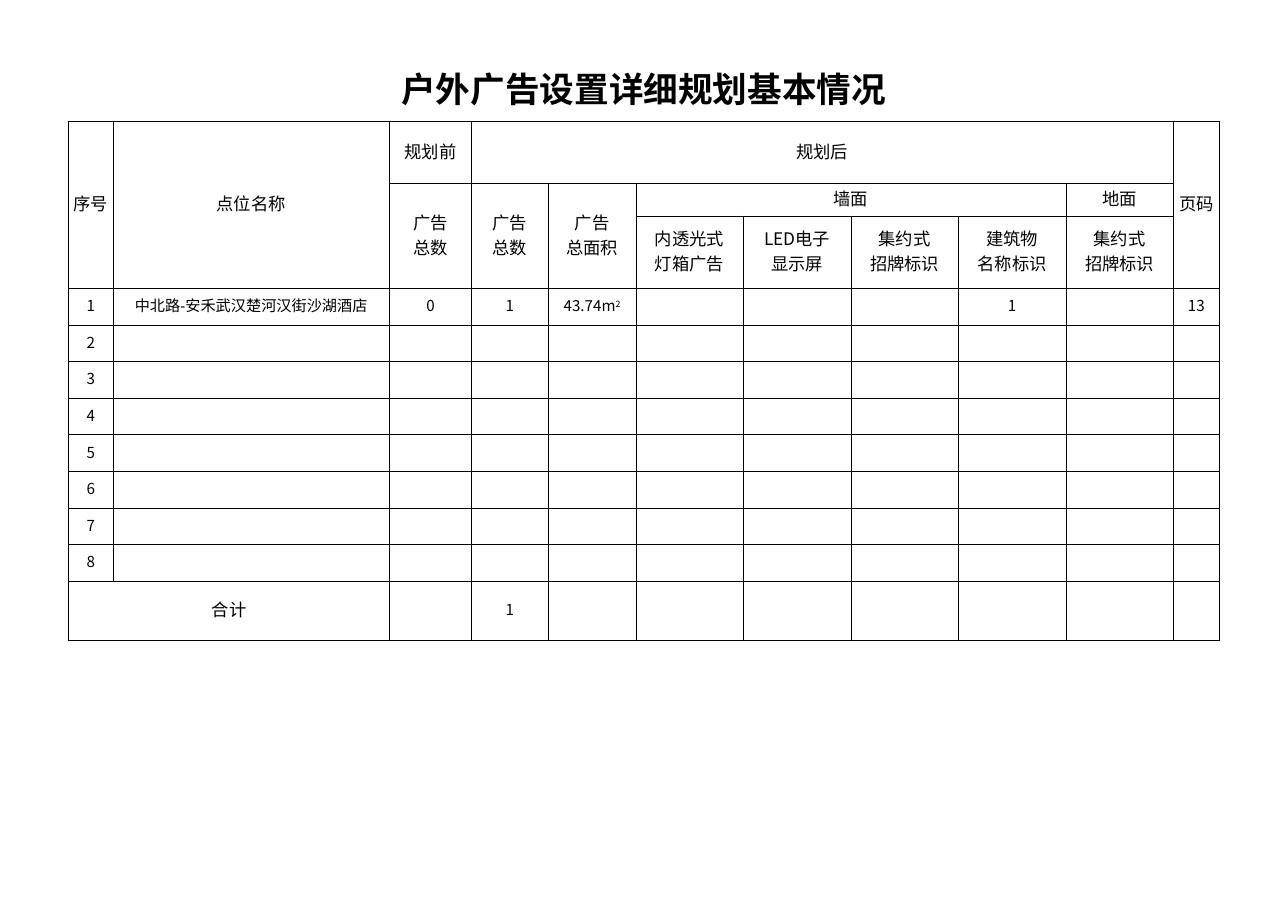
from lxml.etree import SubElement
from pptx import Presentation
from pptx.dml.color import RGBColor
from pptx.enum.text import MSO_ANCHOR, PP_ALIGN
from pptx.oxml.ns import qn
from pptx.util import Inches, Pt

BLACK = RGBColor(0, 0, 0)
WHITE = RGBColor(255, 255, 255)
SANS = "Noto Sans CJK SC"
LEFT, TOP = 0.88, 0.73
COLUMN_WIDTHS = [0.57, 3.55, 1.05, 0.99, 1.12] + [1.38] * 5 + [0.59]
SITE_ROWS = 8
FIRST_SITE_ROW = 4
TOTAL_ROW = FIRST_SITE_ROW + SITE_ROWS
ROW_HEIGHTS = [0.83, 0.79, 0.42, 0.93] + [0.47] * SITE_ROWS + [0.76]
CELL_FORMAT = {"margin_left": Inches(0.01), "margin_top": Inches(0.01),
               "margin_right": Inches(0.01), "margin_bottom": Inches(0.05),
               "vertical_anchor": MSO_ANCHOR.MIDDLE}
TITLE = "户外广告设置详细规划基本情况"

# row, column, rows spanned, columns spanned, text
HEADINGS = [
    (1, 0, 3, 1, "序号"),
    (1, 1, 3, 1, "点位名称"),
    (1, 2, 1, 1, "规划前"),
    (1, 3, 1, 7, "规划后"),
    (1, 10, 3, 1, "页码"),
    (2, 2, 2, 1, "广告\n总数"),
    (2, 3, 2, 1, "广告\n总数"),
    (2, 4, 2, 1, "广告\n总面积"),
    (2, 5, 1, 4, "墙面"),
    (2, 9, 1, 1, "地面"),
    (3, 5, 1, 1, "内透光式\n灯箱广告"),
    (3, 6, 1, 1, "LED电子\n显示屏"),
    (3, 7, 1, 1, "集约式\n招牌标识"),
    (3, 8, 1, 1, "建筑物\n名称标识"),
    (3, 9, 1, 1, "集约式\n招牌标识"),
    (TOTAL_ROW, 0, 1, 2, "合计"),
]
SITE_NAME = "中北路-安禾武汉楚河汉街沙湖酒店"
FIRST_SITE = {2: "0", 3: "1", 4: "43.74m^2", 8: "1", 10: "13"}


def set_values(target, values):
    for name, value in values.items():
        setattr(target, name, value)


def add_span(para, text, size, bold=False, font_name=SANS, raised=False):
    span = para.add_run()
    span.text = text
    set_values(span.font, {"name": font_name, "size": Pt(size), "bold": bold})
    span.font.color.rgb = BLACK
    properties = span._r.get_or_add_rPr()
    SubElement(properties, qn("a:ea"), typeface=SANS)
    if raised:
        properties.set("baseline", "30000")


def write(cell, text, size, **style):
    """Write centred lines; whatever follows a caret is superscript."""
    frame = cell.text_frame
    for index, line in enumerate(text.split("\n")):
        para = frame.add_paragraph() if index else frame.paragraphs[0]
        para.alignment = PP_ALIGN.CENTER
        base, _, power = line.partition("^")
        add_span(para, base, size, **style)
        if power:
            add_span(para, power, size, raised=True, **style)


def format_cell(cell, sides):
    """Draw the borders on the given sides and hide the others."""
    set_values(cell, CELL_FORMAT)
    properties = cell._tc.get_or_add_tcPr()
    for side in "LRTB":
        border = SubElement(properties, qn(f"a:ln{side}"), w=str(Pt(0.5)))
        if side in sides:
            fill = SubElement(border, qn("a:solidFill"))
            SubElement(fill, qn("a:srgbClr"), val=str(BLACK))
        else:
            SubElement(border, qn("a:noFill"))
    cell.fill.solid()
    cell.fill.fore_color.rgb = WHITE


def add_grid(page):
    frame = page.shapes.add_table(
        len(ROW_HEIGHTS), len(COLUMN_WIDTHS), Inches(LEFT), Inches(TOP),
        Inches(sum(COLUMN_WIDTHS)), Inches(sum(ROW_HEIGHTS)))
    table = frame.table
    set_values(table, {"first_row": False, "horz_banding": False})
    for column, width in zip(table.columns, COLUMN_WIDTHS):
        column.width = Inches(width)
    for index, (row, height) in enumerate(zip(table.rows, ROW_HEIGHTS)):
        row.height = Inches(height)
        for cell in row.cells:
            format_cell(cell, "LRTB" if index else "B")
    return table


def fill_title(table):
    cell = table.cell(0, 0)
    cell.merge(table.cell(0, len(COLUMN_WIDTHS) - 1))
    write(cell, TITLE, 32, bold=True)


def fill_headings(table):
    for row, column, row_span, column_span, text in HEADINGS:
        cell = table.cell(row, column)
        if row_span * column_span > 1:
            cell.merge(table.cell(row + row_span - 1, column + column_span - 1))
        write(cell, text, 16)


def fill_sites(table):
    for number in range(SITE_ROWS):
        write(table.cell(FIRST_SITE_ROW + number, 0), str(number + 1), 14)
    write(table.cell(FIRST_SITE_ROW, 1), SITE_NAME, 14, font_name="Arial")
    for column, text in FIRST_SITE.items():
        write(table.cell(FIRST_SITE_ROW, column), text, 14)
    write(table.cell(TOTAL_ROW, 3), "1", 14)


def main():
    deck = Presentation()
    set_values(deck, {"slide_width": Inches(16.53),
                      "slide_height": Inches(11.69)})
    page = deck.slides.add_slide(deck.slide_layouts.get_by_name("Blank"))
    table = add_grid(page)
    fill_title(table)
    fill_headings(table)
    fill_sites(table)
    deck.save("out.pptx")


if __name__ == "__main__":
    main()
